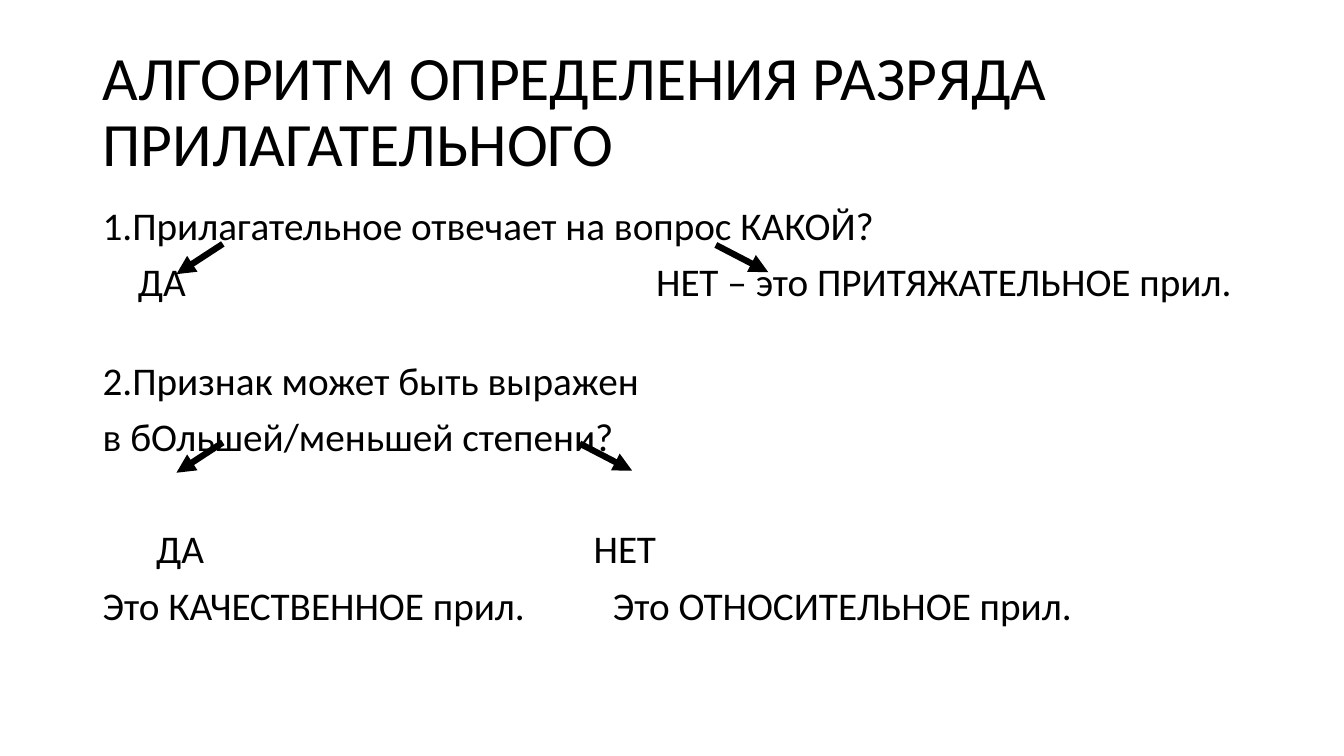
from lxml.etree import SubElement
from pptx import Presentation
from pptx.dml.color import RGBColor
from pptx.enum.shapes import MSO_CONNECTOR
from pptx.enum.text import MSO_ANCHOR
from pptx.oxml.ns import qn
from pptx.util import Inches, Pt

COLORS = {"ink": "000000", "paper": "FFFFFF"}
FONT = "Calibri"
COLS, ROWS = 133.3, 75
LEFT, WIDTH = 9.2, 115
FORK_LEFT = (-4.6, 3)
FORK_RIGHT = (5.2, 2.7)


def grid(n):
    return Inches(n / 10)


def add_box(slide, top, height, anchor):
    sp = slide.shapes.add_textbox(grid(LEFT), grid(top), grid(WIDTH), grid(height))
    tf = sp.text_frame
    tf.word_wrap = True
    tf.vertical_anchor = anchor
    return tf


def set_line(p, cells, size, before=0, stops=()):
    p.line_spacing = 0.9
    p.space_before = Pt(before)
    if stops:
        tabs = SubElement(p._p.get_or_add_pPr(), qn("a:tabLst"))
        for stop in stops:
            SubElement(tabs, qn("a:tab"), pos=str(grid(stop)), algn="l")
    p.font.name = FONT
    p.font.size = Pt(size)
    p.font.color.rgb = RGBColor.from_string(COLORS["ink"])
    p.add_run().text = "\t".join(cells)


def add_arrow(slide, x, y, step):
    dx, dy = step
    line = slide.shapes.add_connector(
        MSO_CONNECTOR.STRAIGHT, grid(x), grid(y), grid(x + dx), grid(y + dy))
    line.line.color.rgb = RGBColor.from_string(COLORS["ink"])
    line.line.width = Pt(4.5)
    SubElement(line.line._get_or_add_ln(), qn("a:tailEnd"), type="triangle")
    SubElement(line._element.spPr, qn("a:effectLst"))


def main():
    prs = Presentation()
    prs.slide_width, prs.slide_height = grid(COLS), grid(ROWS)
    slide = prs.slides.add_slide(prs.slide_layouts[6])
    fill = slide.background.fill
    fill.solid()
    fill.fore_color.rgb = RGBColor.from_string(COLORS["paper"])

    title = add_box(slide, 4, 14.5, MSO_ANCHOR.MIDDLE)
    set_line(title.paragraphs[0], ["АЛГОРИТМ ОПРЕДЕЛЕНИЯ РАЗРЯДА ПРИЛАГАТЕЛЬНОГО"], 44)

    steps = [
        (["1.Прилагательное отвечает на вопрос КАКОЙ?"], 10, ()),
        (["", "ДА", "НЕТ – это ПРИТЯЖАТЕЛЬНОЕ прил."], 10, (3.5, 54.9)),
        (["2.Признак может быть выражен"], 40, ()),
        (["в бОльшей/меньшей степени?"], 10, ()),
        (["", "ДА", "НЕТ"], 50, (5.3, 48.7)),
        (["Это КАЧЕСТВЕННОЕ прил.", "Это ОТНОСИТЕЛЬНОЕ прил."], 10, (50.6,)),
    ]
    body = add_box(slide, 20, 47.6, MSO_ANCHOR.TOP)
    for i, (cells, before, stops) in enumerate(steps):
        p = body.add_paragraph() if i else body.paragraphs[0]
        set_line(p, cells, 28, before, stops)

    for y, right_x in ((24.2, 71), (43.9, 57.5)):
        add_arrow(slide, 22.1, y, FORK_LEFT)
        add_arrow(slide, right_x, y + 0.1, FORK_RIGHT)

    prs.save("out.pptx")


if __name__ == "__main__":
    main()
